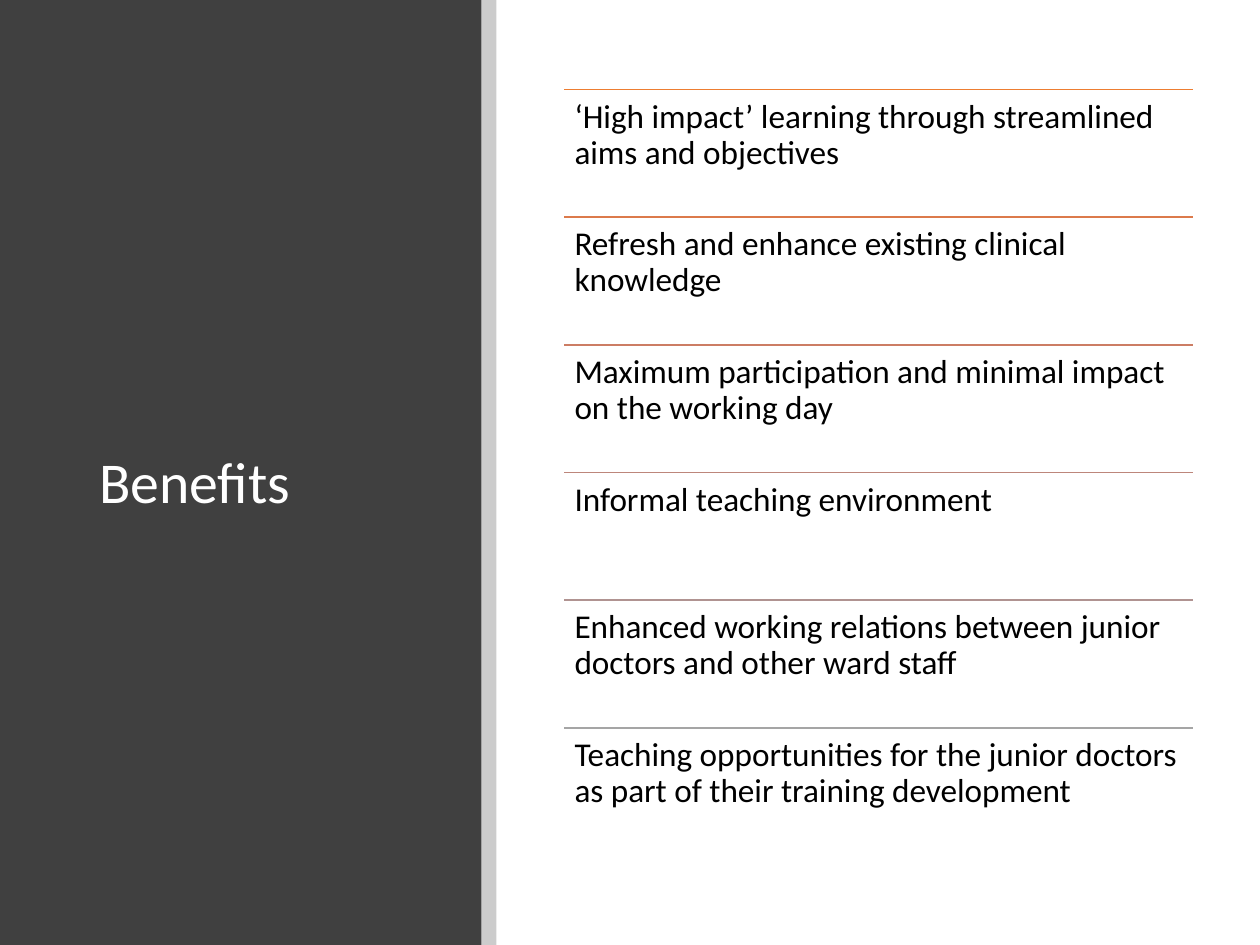
import lxml.etree
import pptx
import pptx.dml.color
import pptx.enum.shapes
import pptx.enum.text
import pptx.oxml.ns
import pptx.util
from dataclasses import dataclass

Inches = pptx.util.Inches
Pt = pptx.util.Pt
RGB = pptx.dml.color.RGBColor.from_string
ANCHOR = pptx.enum.text.MSO_ANCHOR
qn = pptx.oxml.ns.qn


@dataclass(frozen=True)
class Theme:
    font: str = "Calibri"
    title_size: int = 33
    body_size: int = 19
    panel: str = "404040"
    title: str = "FFFFFF"
    ink: str = "000000"


THEME = Theme()

# Each benefit with the colour of the rule above it
BENEFITS = [
    ("‘High impact’ learning through streamlined aims and objectives", "ED7D31"),
    ("Refresh and enhance existing clinical knowledge", "DC7A4B"),
    ("Maximum participation and minimal impact on the working day", "CC7D64"),
    ("Informal teaching environment", "BD867B"),
    ("Enhanced working relations between junior doctors and other ward staff", "B09391"),
    ("Teaching opportunities for the junior doctors as part of their training development",
     "A5A5A5"),
]
LIST_LEFT, LIST_TOP, LIST_WIDTH = 4.48, 0.71, 4.99
LIST_HEIGHT = 6.08


def add_band(s, left, width, color, opacity=100):
    """Full-height rectangle, with opacity in percent."""
    sp = s.shapes.add_shape(pptx.enum.shapes.MSO_SHAPE.RECTANGLE,
                            Inches(left), Inches(0), Inches(width), Inches(7.5))
    sp.shadow.inherit = False
    sp.fill.solid()
    sp.fill.fore_color.rgb = RGB(color)
    sp.line.fill.background()
    if opacity < 100:
        clr = sp._element.spPr.find(qn("a:solidFill")).find(qn("a:srgbClr"))
        lxml.etree.SubElement(clr, qn("a:alpha"), val=str(opacity * 1000))


def add_rule(s, left, top, width, color):
    ln = s.shapes.add_connector(pptx.enum.shapes.MSO_CONNECTOR.STRAIGHT,
                                Inches(left), Inches(top),
                                Inches(left + width), Inches(top))
    ln.line.color.rgb = RGB(color)
    ln.line.width = Pt(1)
    lxml.etree.SubElement(ln._element.spPr, qn("a:effectLst"))


def add_text(s, box, text, size, color, anchor, margin=None):
    tf = s.shapes.add_textbox(*map(Inches, box)).text_frame
    tf.word_wrap = True
    tf.vertical_anchor = anchor
    if margin is not None:
        tf.margin_left = tf.margin_right = Inches(margin)
        tf.margin_top = tf.margin_bottom = Inches(margin)
    p = tf.paragraphs[0]
    p.line_spacing = 0.9
    r = p.add_run()
    r.text = text
    r.font.name = THEME.font
    r.font.size = Pt(size)
    r.font.color.rgb = RGB(color)


def main():
    prs = pptx.Presentation()
    prs.slide_width, prs.slide_height = Inches(10), Inches(7.5)
    s = prs.slides.add_slide(prs.slide_layouts[6])

    # Title panel with its translucent edge
    add_band(s, 0, 3.82, THEME.panel)
    add_text(s, (0.69, 0.89, 2.74, 5.91), "Benefits",
             THEME.title_size, THEME.title, ANCHOR.MIDDLE)
    add_band(s, 3.82, 0.12, THEME.ink, opacity=20)

    # Ruled list of benefits
    row = LIST_HEIGHT / len(BENEFITS)
    for i, (text, color) in enumerate(BENEFITS):
        top = LIST_TOP + i * row
        add_rule(s, LIST_LEFT, top, LIST_WIDTH, color)
        add_text(s, (LIST_LEFT, top, LIST_WIDTH, row), text,
                 THEME.body_size, THEME.ink, ANCHOR.TOP, margin=0.08)

    prs.save("out.pptx")


if __name__ == "__main__":
    main()
